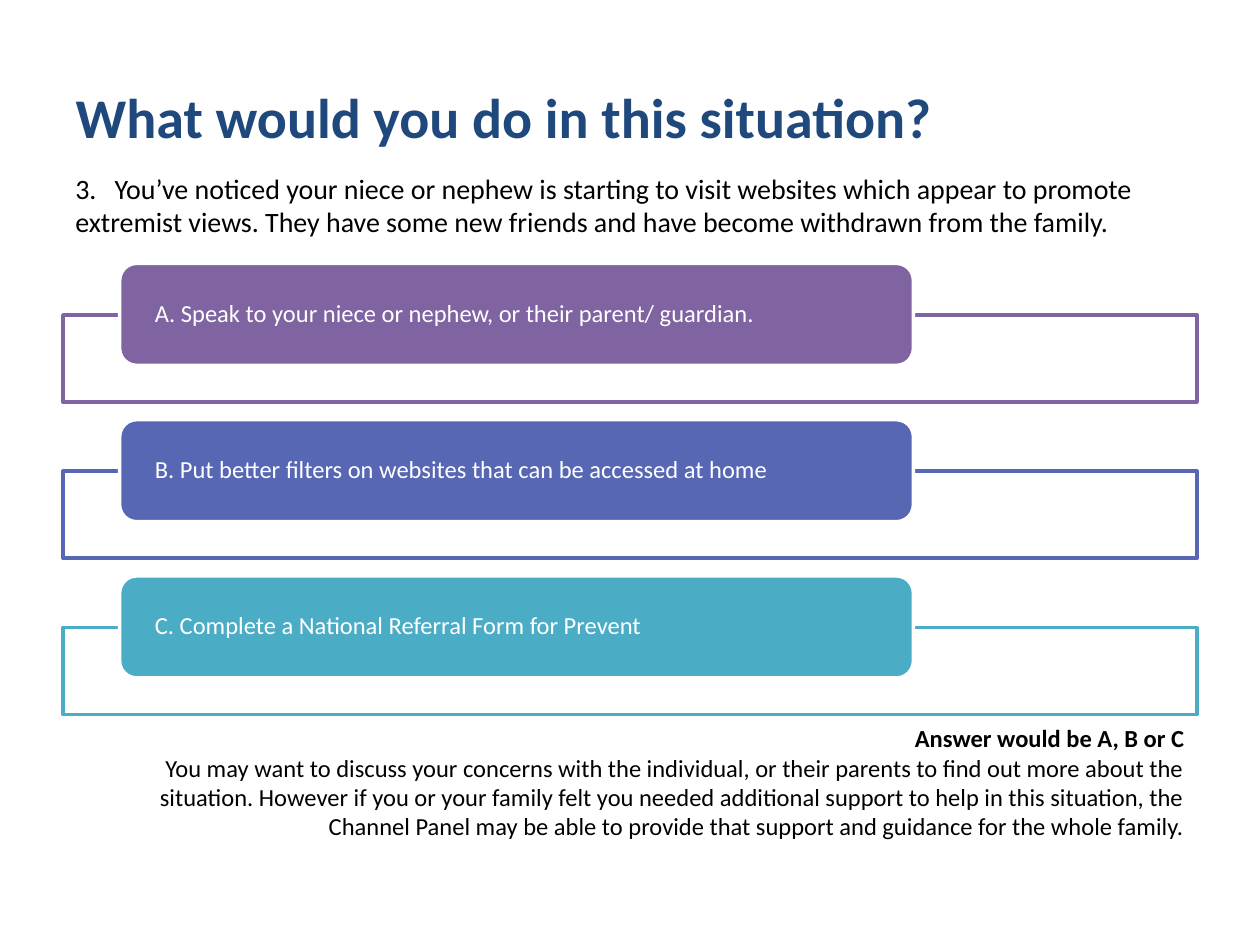
from lxml import etree
from pptx import Presentation
from pptx.dml.color import RGBColor
from pptx.enum.shapes import MSO_SHAPE
from pptx.enum.text import MSO_ANCHOR, PP_ALIGN
from pptx.oxml.ns import qn
from pptx.util import Pt

RECT, ROUND = MSO_SHAPE.RECTANGLE, MSO_SHAPE.ROUNDED_RECTANGLE
TOP, MIDDLE = MSO_ANCHOR.TOP, MSO_ANCHOR.MIDDLE
LEFT, RIGHT = PP_ALIGN.LEFT, PP_ALIGN.RIGHT

COLORS = {
    "title": "1F497D", "text": "000000", "white": "FFFFFF",
    "purple": "8064A2", "blue": "5767B4", "teal": "4BACC6",
}
FONTS = {
    "title": {"name": "Calibri", "size": Pt(32), "bold": True},
    "lead": {"name": "Calibri", "size": Pt(16), "bold": False},
    "body": {"name": "Calibri", "size": Pt(14), "bold": False},
    "strong": {"name": "Calibri", "size": Pt(14), "bold": True},
}
EDGE, WIDTH = 36, 648
FIRST, PITCH = 150.5, 89.3

TITLE = "What would you do in this situation?"
CASE = ("3.\tYou’ve noticed your niece or nephew is starting to visit websites "
        "which appear to promote extremist views. They have some new friends "
        "and have become withdrawn from the family.")
CHOICES = [
    ("purple", "A. Speak to your niece or nephew, or their parent/ guardian."),
    ("blue", "B. Put better filters on websites that can be accessed at home"),
    ("teal", "C. Complete a National Referral Form for Prevent"),
]
ANSWER = "Answer would be A, B or C"
REASON = ("You may want to discuss your concerns with the individual, or their "
          "parents to find out more about the situation. However if you or your "
          "family felt you needed additional support to help in this situation, "
          "the Channel Panel may be able to provide that support and guidance "
          "for the whole family.")


def rgb(key):
    return RGBColor.from_string(COLORS[key])


def assign(item, values):
    for name, value in values.items():
        setattr(item, name, value)


def write(para, text, style, color, align=LEFT):
    para.alignment = align
    run = para.add_run()
    run.text = text
    assign(run.font, FONTS[style])
    run.font.color.rgb = rgb(color)


def add_title(slide):
    title = slide.shapes.title
    assign(title, {"left": Pt(EDGE), "top": Pt(21.6),
                   "width": Pt(WIDTH), "height": Pt(90)})
    title.text_frame.vertical_anchor = MIDDLE
    write(title.text_frame.paragraphs[0], TITLE, "title", "title")


def add_text(slide, top, height):
    box = slide.shapes.add_textbox(Pt(EDGE), Pt(top), Pt(WIDTH), Pt(height))
    assign(box.text_frame, {"word_wrap": True, "vertical_anchor": TOP})
    return box.text_frame


def add_tab(para, pos):
    tabs = etree.SubElement(para._p.get_or_add_pPr(), qn("a:tabLst"))
    etree.SubElement(tabs, qn("a:tab"), pos=str(Pt(pos)), algn="l")


def add_box(slide, kind, frame, fill, line):
    box = slide.shapes.add_shape(kind, *map(Pt, frame))
    box.shadow.inherit = False
    box.fill.solid()
    box.fill.fore_color.rgb = rgb(fill)
    box.line.color.rgb = rgb(line)
    box.line.width = Pt(2)
    return box


def add_choice(slide, top, color, text):
    # Outlined panel behind, filled label overlapping its top edge
    add_box(slide, RECT, (EDGE, top + 29.5, WIDTH, 49.7), "white", color)
    label = add_box(slide, ROUND, (68.4, top, 453.6, 58.3), color, "white")
    frame = label.text_frame
    assign(frame, {"word_wrap": True, "vertical_anchor": MIDDLE,
                   "margin_left": Pt(17.3), "margin_right": Pt(17.3),
                   "margin_top": 0, "margin_bottom": 0})
    para = frame.paragraphs[0]
    para.line_spacing = 0.9
    write(para, text, "body", "white")


def main():
    deck = Presentation()
    assign(deck, {"slide_width": Pt(720), "slide_height": Pt(540)})
    slide = deck.slides.add_slide(deck.slide_layouts.get_by_name("Title Only"))
    add_title(slide)

    # Choices
    for i, (color, text) in enumerate(CHOICES):
        add_choice(slide, FIRST + i * PITCH, color, text)

    # Situation
    para = add_text(slide, 94.3, 46).paragraphs[0]
    add_tab(para, 22.5)
    write(para, CASE, "lead", "text")

    # Answer
    frame = add_text(slide, 409.7, 92)
    write(frame.paragraphs[0], ANSWER, "strong", "text", RIGHT)
    write(frame.add_paragraph(), REASON, "body", "text", RIGHT)

    deck.save("out.pptx")


if __name__ == "__main__":
    main()
